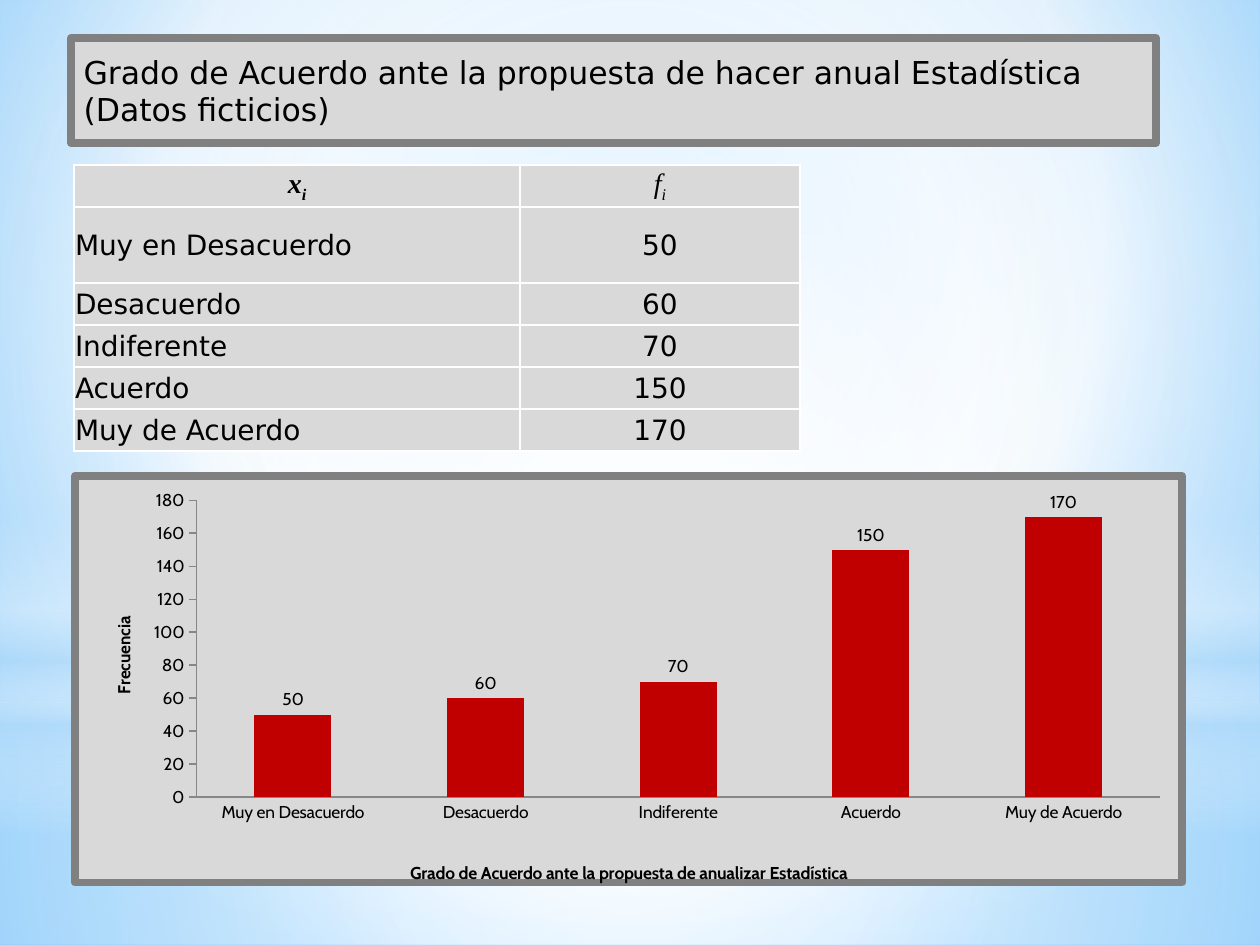
import pptx
import pptx.chart.data
import pptx.dml.color
import pptx.enum.chart
import pptx.enum.shapes
import pptx.enum.text
import pptx.oxml
import pptx.oxml.ns
import pptx.util

ALIGN = pptx.enum.text.PP_ALIGN
MARK = pptx.enum.chart.XL_TICK_MARK
FORM = pptx.enum.shapes.MSO_SHAPE


def px(count):
    return pptx.util.Emu(round(count * 914400 / 126))


def tint(code):
    return pptx.dml.color.RGBColor.from_string(code)


def node(text):
    head, tail = text.split(">", 1)
    return pptx.oxml.parse_xml(f"{head} {pptx.oxml.ns.nsdecls('a', 'c')}>{tail}")


def put(item, **values):
    for name, value in values.items():
        setattr(item, name, value)


class Board:
    """Hold the style and the current slide, and add each kind of element."""

    panel, edge, ink, bar, axis = "D9D9D9", "808080", "000000", "C00000", "878787"
    sans, serif, label = "DejaVu Sans", "Times New Roman", "Cabin"

    def __init__(self, deck):
        self.slide = deck.slides.add_slide(deck.slide_layouts[5])

    def say(self, para, text, sub=False, **style):
        run = para.add_run()
        run.text = text
        put(run.font, **style)
        run.font.color.rgb = tint(self.ink)
        if sub:
            run.font._element.set("baseline", "-25000")

    def blend(self, owner, fill, stops, way):
        fill.solid()
        marks = "".join(
            f'<a:gs pos="{spot * 1000}"><a:srgbClr val="{code}">'
            f'<a:alpha val="{alpha * 1000}"/></a:srgbClr></a:gs>'
            for spot, code, alpha in stops)
        route = '<a:lin ang="5400000" scaled="0"/>'
        if way:
            sides = " ".join(f'{side}="{part * 1000}"' for side, part in zip("ltrb", way))
            route = f'<a:path path="circle"><a:fillToRect {sides}/></a:path>'
        old = owner.element.xpath(".//a:solidFill")[0]
        old.getparent().replace(
            old, node(f"<a:gradFill><a:gsLst>{marks}</a:gsLst>{route}</a:gradFill>"))

    def ground(self, stops, way):
        self.blend(self.slide, self.slide.background.fill, stops, way)

    def glow(self, form, top, height, stops, way=None):
        shape = self.slide.shapes.add_shape(form, 0, px(top), px(1260), px(height))
        shape.shadow.inherit = False
        shape.line.fill.background()
        self.blend(shape, shape.fill, stops, way)

    def title(self, text, box):
        shape = self.slide.shapes.title
        put(shape, **dict(zip(("left", "top", "width", "height"), map(px, box))))
        shape.fill.solid()
        shape.fill.fore_color.rgb = tint(self.panel)
        shape.line.color.rgb = tint(self.edge)
        shape.line.width = pptx.util.Pt(4.5)
        frame = shape.text_frame
        put(frame, word_wrap=True, auto_size=pptx.enum.text.MSO_AUTO_SIZE.SHAPE_TO_FIT_TEXT,
            vertical_anchor=pptx.enum.text.MSO_ANCHOR.MIDDLE)
        para = frame.paragraphs[0]
        para.alignment = ALIGN.LEFT
        self.say(para, text, size=pptx.util.Pt(18), name=self.sans)
        shape.element.getparent().append(shape.element)

    def cell(self, cell, runs, align):
        put(cell, margin_left=px(1), margin_right=px(1), margin_top=px(1), margin_bottom=0,
            vertical_anchor=pptx.enum.text.MSO_ANCHOR.MIDDLE)
        cell.fill.solid()
        cell.fill.fore_color.rgb = tint(self.panel)
        for spot, side in enumerate("LRTB"):
            cell._tc.tcPr.insert(spot, node(
                f'<a:ln{side} w="12700"><a:solidFill><a:srgbClr val="FFFFFF"/>'
                f"</a:solidFill></a:ln{side}>"))
        para = cell.text_frame.paragraphs[0]
        para.alignment = align
        for text, style in runs:
            self.say(para, text, **{"size": pptx.util.Pt(16), "name": self.sans, **style})

    def table(self, rows, box, wides, highs):
        grid = self.slide.shapes.add_table(len(rows), len(wides), *map(px, box)).table
        for col, wide in zip(grid.columns, wides):
            col.width = px(wide)
        for line, high in zip(grid.rows, highs):
            line.height = px(high)
        for y, row in enumerate(rows):
            for x, runs in enumerate(row):
                self.cell(grid.cell(y, x), runs, ALIGN.LEFT if y and not x else ALIGN.CENTER)

    def place(self, owner, spot, target="", **parts):
        for old in owner.xpath("c:layout"):
            owner.remove(old)
        modes = "".join(f'<c:{side}Mode val="edge"/>' for side in "xy")
        sizes = "".join(f'<c:{side} val="{part}"/>' for side, part in parts.items())
        owner.insert(spot, node(
            f"<c:layout><c:manualLayout>{target}{modes}{sizes}</c:manualLayout></c:layout>"))

    def scale(self, axis, text, tick, x, y):
        put(axis, has_major_gridlines=False, major_tick_mark=tick, minor_tick_mark=MARK.NONE)
        axis.format.line.color.rgb = tint(self.axis)
        para = axis.axis_title.text_frame.paragraphs[0]
        self.say(para, text, size=pptx.util.Pt(10), name=self.label, bold=True)
        self.place(axis.axis_title.element, 1, x=x, y=y)

    def chart(self, names, counts, box, below, beside):
        data = pptx.chart.data.CategoryChartData()
        data.categories = names
        data.add_series("Series 1", counts)
        kind = pptx.enum.chart.XL_CHART_TYPE.COLUMN_CLUSTERED
        chart = self.slide.shapes.add_chart(kind, *map(px, box), data).chart
        put(chart, has_legend=False, has_title=False)
        put(chart.font, size=pptx.util.Pt(10), name=self.label)
        chart.font.color.rgb = tint(self.ink)
        plot = chart.plots[0]
        put(plot, gap_width=150, overlap=-25, vary_by_categories=False, has_data_labels=True)
        put(plot.data_labels, show_value=True,
            position=pptx.enum.chart.XL_LABEL_POSITION.OUTSIDE_END)
        fill = plot.series[0].format.fill
        fill.solid()
        fill.fore_color.rgb = tint(self.bar)
        self.scale(chart.category_axis, below, MARK.NONE, 0.3, 0.94)
        self.scale(chart.value_axis, beside, MARK.OUTSIDE, 0.03, 0.34)
        put(chart.value_axis, minimum_scale=0, maximum_scale=180, major_unit=20)
        space = chart.element
        self.place(space.xpath("c:chart/c:plotArea")[0], 0,
                   '<c:layoutTarget val="inner"/>', x=0.11, y=0.06, w=0.87, h=0.73)
        space.xpath("c:txPr")[0].addprevious(node(
            f'<c:spPr><a:solidFill><a:srgbClr val="{self.panel}"/></a:solidFill>'
            f'<a:ln w="57150"><a:solidFill><a:srgbClr val="{self.edge}"/></a:solidFill>'
            "<a:round/></a:ln></c:spPr>"))


def main():
    deck = pptx.Presentation()
    put(deck, slide_width=px(1260), slide_height=px(945))
    board = Board(deck)
    white, sky, mid = "FFFFFF", "B4DCFA", (50, 50, 50, 50)
    board.ground([(0, "9ED5FF", 100), (60, white, 100), (100, "5BB9FF", 100)], (20, 10, 20, 60))
    board.glow(FORM.RECTANGLE, 703, 242, [(0, white, 91), (37, white, 76), (100, sky, 79)], mid)
    board.glow(FORM.RECTANGLE, 0, 703, [(0, white, 89), (48, white, 62), (100, sky, 79)], mid)
    board.glow(FORM.RECTANGLE, 519, 315, [(0, white, 0), (29, white, 30), (45, sky, 40),
                                          (55, white, 26), (65, sky, 60), (100, white, 0)])
    board.glow(FORM.OVAL, 220, 703, [(0, white, 100), (56, white, 0)], mid)
    board.title("Grado de Acuerdo ante la propuesta de hacer anual Estadística (Datos ficticios)",
                (71, 46, 1085, 89))

    names = ["Muy en Desacuerdo", "Desacuerdo", "Indiferente", "Acuerdo", "Muy de Acuerdo"]
    counts = [50, 60, 70, 150, 170]
    sign = {"name": board.serif, "italic": True}
    rows = [[[(mark, {**sign, "bold": bold}), ("i", {**sign, "bold": bold, "sub": True})]
             for mark, bold in (("x", True), ("f", False))]]
    rows += [[[(text, {"bold": False})] for text in (name, str(count))]
             for name, count in zip(names, counts)]
    board.table(rows, (74, 165, 726, 286), (446, 280), (42, 76, 42, 42, 42, 42))
    board.chart(names, counts, (71, 472, 1115, 417),
                "Grado de Acuerdo ante la propuesta de anualizar Estadística", "Frecuencia")
    deck.save("out.pptx")


if __name__ == "__main__":
    main()
